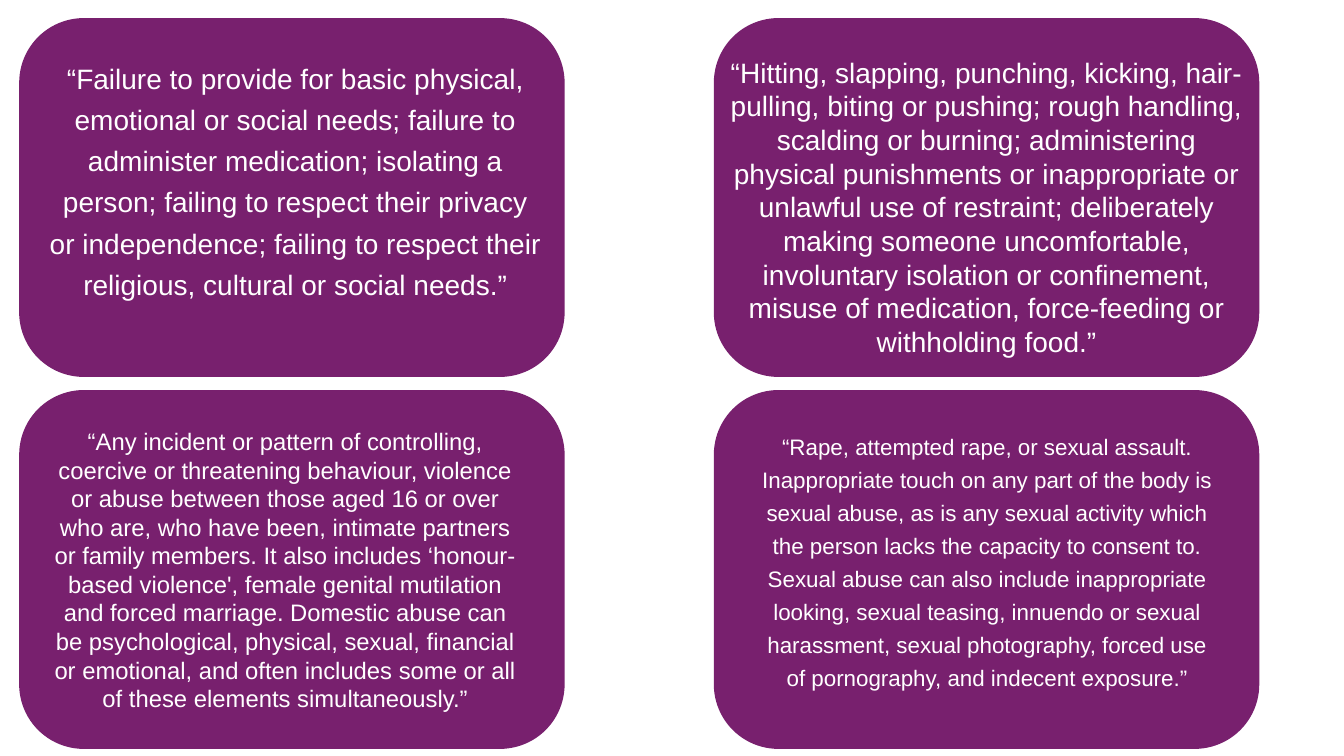
from pptx import Presentation
from pptx.dml.color import RGBColor
from pptx.enum.shapes import MSO_SHAPE
from pptx.enum.text import MSO_ANCHOR, PP_ALIGN
from pptx.util import Inches, Pt

PURPLE = "78206E"
WHITE = "FFFFFF"
CARD_W, CARD_H = 5.41, 3.56
LEFT, TOP = 0.19, 0.18
STEP_X, STEP_Y = 6.89, 3.69

NEGLECT = (
    "“Failure to provide for basic physical, emotional or social needs; "
    "failure to administer medication; isolating a person; failing to respect "
    "their privacy or independence; failing to respect their religious, "
    "cultural or social needs.”"
)
HARM = (
    "“Hitting, slapping, punching, kicking, hair-pulling, biting or pushing; "
    "rough handling, scalding or burning; administering physical punishments "
    "or inappropriate or unlawful use of restraint; deliberately making "
    "someone uncomfortable, involuntary isolation or confinement, misuse of "
    "medication, force-feeding or withholding food.”"
)
HOME = (
    "“Any incident or pattern of controlling, coercive or threatening "
    "behaviour, violence or abuse between those aged 16 or over who are, who "
    "have been, intimate partners or family members. It also includes "
    "‘honour-based violence', female genital mutilation and forced marriage. "
    "Domestic abuse can be psychological, physical, sexual, financial or "
    "emotional, and often includes some or all of these elements "
    "simultaneously.”"
)
SEXUAL = (
    "“Rape, attempted rape, or sexual assault. Inappropriate touch on any part "
    "of the body is sexual abuse, as is any sexual activity which the person "
    "lacks the capacity to consent to. Sexual abuse can also include "
    "inappropriate looking, sexual teasing, innuendo or sexual harassment, "
    "sexual photography, forced use of pornography, and indecent exposure.”"
)

# column, row, text, offset and size of the text box, font size, options
CARDS = [
    (0, 0, NEGLECT, (0.1, 0.3, 5.2, 2.96), 20,
     {"lines": 1.23, "before": 0.1, "indent": 0.08}),
    (0, 1, HOME, (0.29, 0.32, 4.7, 2.92), 17,
     {"inset": 0.03, "anchor": MSO_ANCHOR.MIDDLE}),
    (1, 0, HARM, (0, 0.32, 5.41, 3.13), 20, {}),
    (1, 1, SEXUAL, (0.27, 0.32, 4.8, 2.72), 16,
     {"lines": 1.23, "before": 4.8, "indent": 0.08}),
]


def color(code):
    """Turn a hex string into a colour."""
    return RGBColor.from_string(code)


def add_quote(slide, box, text, size, lines=None, before=0, indent=0,
              inset=None, anchor=MSO_ANCHOR.TOP):
    """Set a centred white quote in the given box."""
    frame = slide.shapes.add_textbox(*map(Inches, box)).text_frame
    frame.word_wrap = True
    frame.vertical_anchor = anchor
    if inset is not None:
        frame.margin_left = frame.margin_right = Inches(inset)
        frame.margin_top = frame.margin_bottom = Inches(inset)
    frame.text = text
    para = frame.paragraphs[0]
    para.alignment = PP_ALIGN.CENTER
    para.space_before = Pt(before)
    if lines:
        para.line_spacing = lines
    if indent:
        props = para._p.get_or_add_pPr()
        props.set("marL", str(Inches(indent)))
        props.set("indent", "0")
    font = para.runs[0].font
    font.name, font.size = "Arial", Pt(size)
    font.color.rgb = color(WHITE)


def add_card(slide, left, top, text, place, size, options):
    """Draw a rounded card with its quote, placed from the card's corner."""
    card = slide.shapes.add_shape(
        MSO_SHAPE.ROUNDED_RECTANGLE,
        *map(Inches, (left, top, CARD_W, CARD_H)))
    card.adjustments[0] = 0.18
    card.shadow.inherit = False
    card.fill.solid()
    card.fill.fore_color.rgb = color(PURPLE)
    card.line.fill.background()
    x, y, width, height = place
    add_quote(slide, (left + x, top + y, width, height), text, size, **options)


def main():
    """Build the slide of four abuse definitions."""
    deck = Presentation()
    deck.slide_width, deck.slide_height = Inches(13.33), Inches(7.5)
    slide = deck.slides.add_slide(deck.slide_layouts[6])
    for col, row, text, place, size, options in CARDS:
        add_card(slide, LEFT + col * STEP_X, TOP + row * STEP_Y,
                 text, place, size, options)
    deck.save("out.pptx")


if __name__ == "__main__":
    main()
